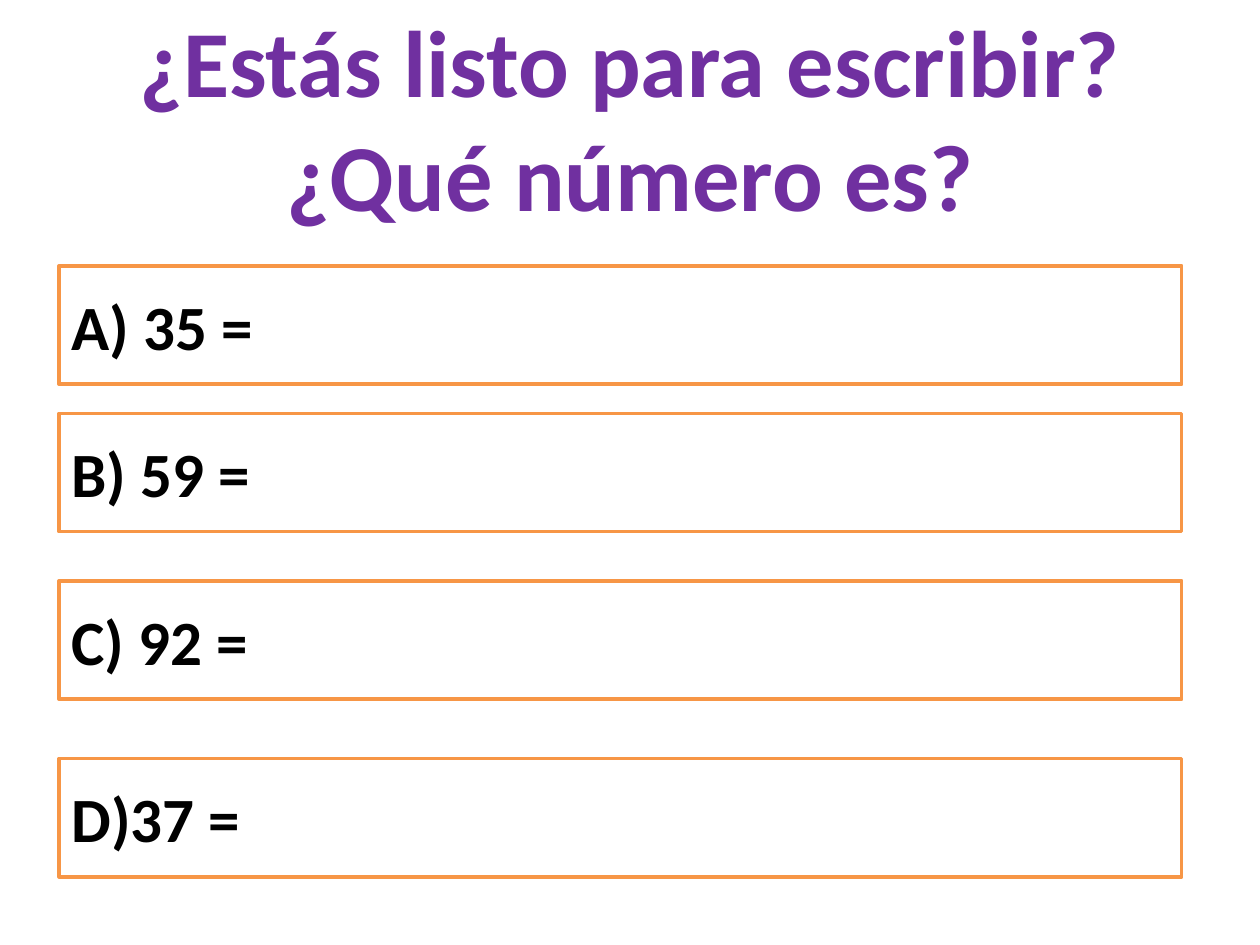
from pptx import Presentation
from pptx import util as u
from pptx.dml import color
from pptx.enum import shapes, text

COLORS = {"title": "7030A0", "border": "F79646", "fill": "FFFFFF", "answer": "000000"}
FONT = "Calibri"
EXERCISES = [
    (151.9, "A) 35 ="),
    (236.2, "B) 59 ="),
    (331.9, "C) 92 ="),
    (433.4, "D)37 ="),
]


def rgb(name):
    return color.RGBColor.from_string(COLORS[name])


def write_text(shape, words, size, color_name, alignment):
    """Put one bold, vertically centred paragraph in the shape."""
    frame = shape.text_frame
    frame.word_wrap = True
    frame.vertical_anchor = text.MSO_ANCHOR.MIDDLE
    paragraph = frame.paragraphs[0]
    paragraph.alignment = alignment
    run = paragraph.add_run()
    run.text = words
    run.font.name = FONT
    run.font.size = u.Pt(size)
    run.font.bold = True
    run.font.color.rgb = rgb(color_name)


def add_title(slide, left, top, width, height, words):
    box = slide.shapes.add_textbox(u.Pt(left), u.Pt(top), u.Pt(width), u.Pt(height))
    write_text(box, words, 54, "title", text.PP_ALIGN.CENTER)


def add_exercise(slide, left, top, width, height, words):
    box = slide.shapes.add_shape(
        shapes.MSO_SHAPE.RECTANGLE, u.Pt(left), u.Pt(top), u.Pt(width), u.Pt(height)
    )
    box.shadow.inherit = False
    box.fill.solid()
    box.fill.fore_color.rgb = rgb("fill")
    box.line.color.rgb = rgb("border")
    box.line.width = u.Pt(2)
    write_text(box, words, 36, "answer", text.PP_ALIGN.LEFT)


def main():
    presentation = Presentation()
    presentation.slide_width = u.Pt(720)
    presentation.slide_height = u.Pt(540)
    slide = presentation.slides.add_slide(presentation.slide_layouts[6])
    add_title(slide, 36, 21.6, 648, 90, "¿Estás listo para escribir? ¿Qué número es?")
    for top, words in EXERCISES:
        add_exercise(slide, 33.8, top, 641.5, 67.7, words)
    presentation.save("out.pptx")


if __name__ == "__main__":
    main()
